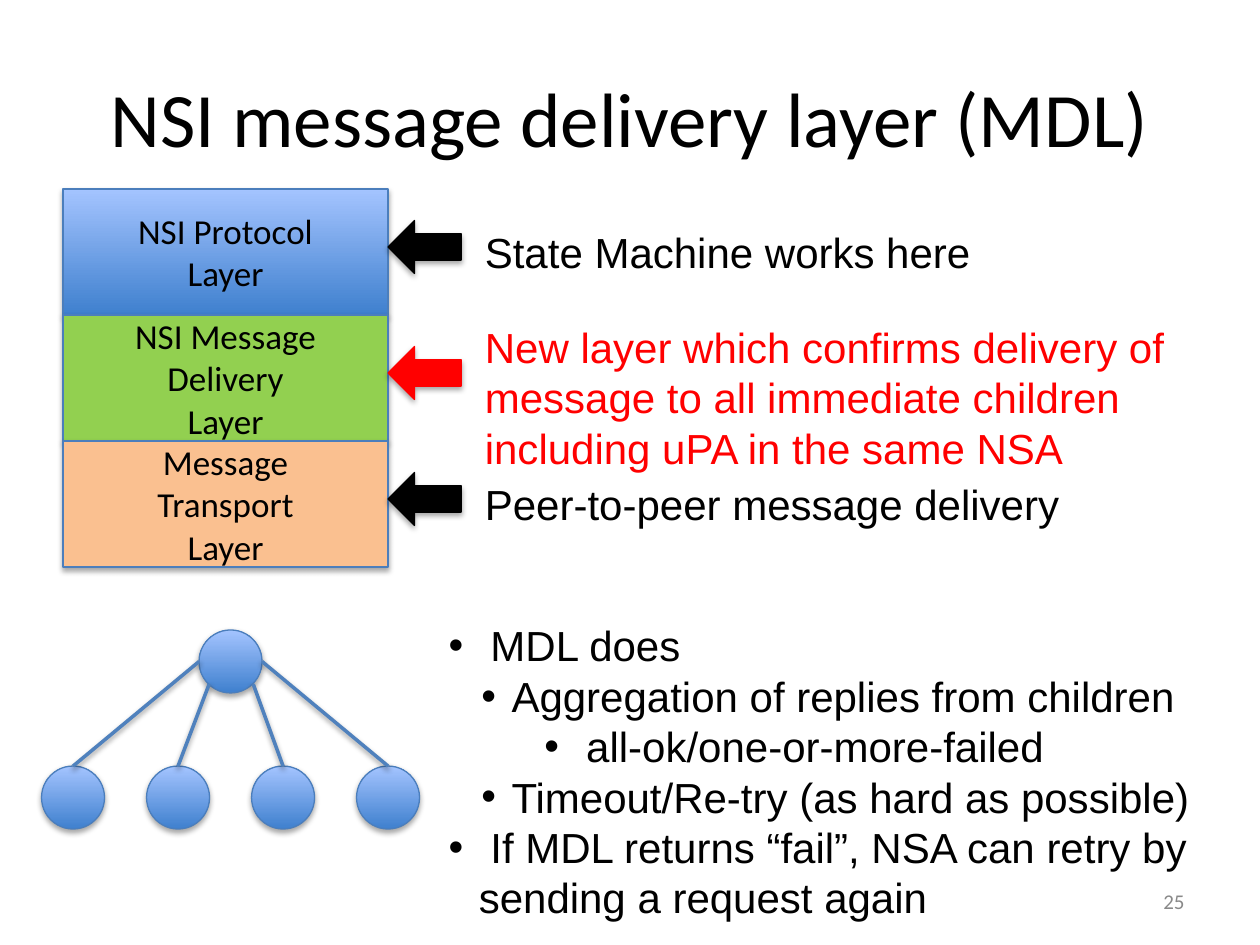
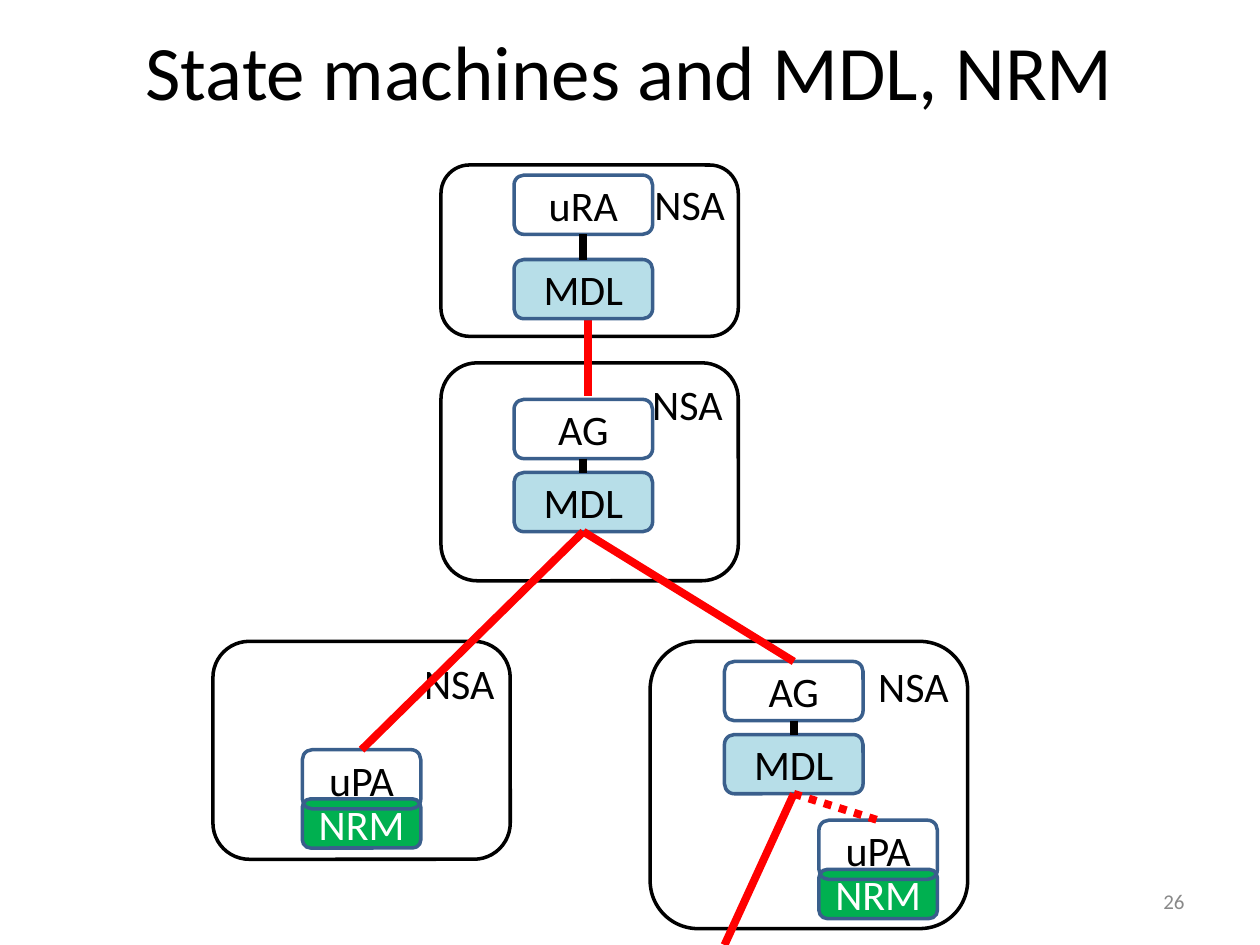
import pptx
import pptx.dml.color
import pptx.enum.dml
import pptx.enum.shapes
import pptx.enum.text
import pptx.oxml
import pptx.oxml.ns
import pptx.util
from lxml import etree

Inches = pptx.util.Inches
Pt = pptx.util.Pt
RGBColor = pptx.dml.color.RGBColor
SHAPE = pptx.enum.shapes.MSO_SHAPE
ALIGN = pptx.enum.text.PP_ALIGN
ANCHOR = pptx.enum.text.MSO_ANCHOR
DASH = pptx.enum.dml.MSO_LINE

BLACK = RGBColor(0, 0, 0)
WHITE = RGBColor(0xFF, 0xFF, 0xFF)
RED = RGBColor(0xFF, 0, 0)
GREY = RGBColor(0x89, 0x89, 0x89)
BLUE_DARK = RGBColor(0x3F, 0x80, 0xCE)
BLUE_LIGHT = RGBColor(0xA4, 0xC4, 0xFF)
BLUE_EDGE = RGBColor(0x4B, 0x7E, 0xBC)
BLUE_LINE = RGBColor(0x4F, 0x81, 0xBD)
BOX_EDGE = RGBColor(0x3A, 0x5F, 0x8C)
LIME = RGBColor(0x92, 0xD0, 0x50)
ORANGE = RGBColor(0xFA, 0xC0, 0x90)
GREEN = RGBColor(0, 0xB0, 0x50)
PALE_BLUE = RGBColor(0xB7, 0xDE, 0xE8)
GRADIENT = (BLUE_DARK, BLUE_LIGHT)

HEADING_FONT = "Calibri"
BODY_FONT = "Arial"
BODY_LINE = Pt(28.8)
HANG = 0.24


def place(sp, left, top, width, height):
    sp.left, sp.top = Inches(left), Inches(top)
    sp.width, sp.height = Inches(width), Inches(height)


def write(tf, text, size, color=BLACK, font=HEADING_FONT, align=ALIGN.CENTER,
          anchor=ANCHOR.MIDDLE, spacing=None):
    tf.text = text
    tf.vertical_anchor = anchor
    for p in tf.paragraphs:
        p.alignment = align
        if spacing:
            p.line_spacing = spacing
        for r in p.runs:
            r.font.name = font
            r.font.size = Pt(size)
            r.font.color.rgb = color


def add_title(s, text, top=0.3, height=1.25):
    place(s.shapes.title, 0.5, top, 9, height)
    write(s.shapes.title.text_frame, text, 44)


def add_number(s, number):
    sp = s.shapes.add_textbox(Inches(7.17), Inches(6.95), Inches(2.33), Inches(0.4))
    sp.text_frame.word_wrap = True
    write(sp.text_frame, str(number), 12, GREY, align=ALIGN.RIGHT)


def add_label(s, top, width, height, text, color=BLACK):
    sp = s.shapes.add_textbox(Inches(3.75), Inches(top), Inches(width), Inches(height))
    sp.text_frame.word_wrap = False
    write(sp.text_frame, text, 24, color, BODY_FONT, ALIGN.LEFT, ANCHOR.TOP, BODY_LINE)


def add_figure(s, kind, left, top, width, height, fill, edge, weight=0.75, shadow=True):
    sp = s.shapes.add_shape(kind, Inches(left), Inches(top), Inches(width), Inches(height))
    if not shadow:
        sp.shadow.inherit = False
    if fill is None:
        sp.fill.background()
    elif fill is GRADIENT:
        sp.fill.gradient()
        sp.fill.gradient_angle = 90
        for stop, position, color in zip(sp.fill.gradient_stops, (0, 1), GRADIENT):
            stop.position = position
            stop.color.rgb = color
    else:
        sp.fill.solid()
        sp.fill.fore_color.rgb = fill
    sp.line.color.rgb = edge
    sp.line.width = Pt(weight)
    return sp


def add_node(s, left, top):
    return add_figure(s, SHAPE.OVAL, left, top, 0.5, 0.5, GRADIENT, BLUE_EDGE)


def add_layer(s, top, text, fill):
    sp = add_figure(s, SHAPE.RECTANGLE, 0.5, top, 2.58, 1, fill, BLUE_EDGE)
    write(sp.text_frame, text, 20)


def add_round_box(s, left, top, width, height, text, fill=None, edge=BOX_EDGE,
                  color=BLACK, align=ALIGN.CENTER, anchor=ANCHOR.MIDDLE):
    sp = add_figure(s, SHAPE.ROUNDED_RECTANGLE, left, top, width, height, fill, edge, 2, False)
    tf = sp.text_frame
    tf.margin_left = tf.margin_right = tf.margin_top = tf.margin_bottom = Inches(0.04)
    write(tf, text, 24, color, align=align, anchor=anchor)
    return sp


def add_frame(s, left, top, width, height):
    add_round_box(s, left, top, width, height, "NSA", edge=BLACK,
                  align=ALIGN.RIGHT, anchor=ANCHOR.TOP)


def add_line(s, start, end, color, weight, shadow=False):
    x1, y1 = start
    x2, y2 = end
    line = s.shapes.add_connector(pptx.enum.shapes.MSO_CONNECTOR.STRAIGHT,
                                  Inches(x1), Inches(y1), Inches(x2), Inches(y2))
    line.line.color.rgb = color
    line.line.width = Pt(weight)
    if not shadow:
        etree.SubElement(line._element.spPr, pptx.oxml.ns.qn("a:effectLst"))
    return line


def link(s, upper, lower, color):
    line = add_line(s, (0, 0), (1, 1), color, 4.5)
    line.begin_connect(upper, 2)
    line.end_connect(lower, 0)
    return line


def add_bullets(sp, items):
    tf = sp.text_frame
    write(tf, "\n".join(text for _, text in items), 24, BLACK, BODY_FONT,
          ALIGN.LEFT, ANCHOR.TOP, BODY_LINE)
    tf.auto_size = pptx.enum.text.MSO_AUTO_SIZE.SHAPE_TO_FIT_TEXT
    for p, (level, _) in zip(tf.paragraphs, items):
        p.level = level
        p.space_before = Pt(0)
        pPr = p._p.get_or_add_pPr()
        pPr.set("marL", str(Inches((HANG, 0.5, 1)[level])))
        pPr.set("indent", str(-Inches(HANG)))
        etree.SubElement(pPr, pptx.oxml.ns.qn("a:buFont"), typeface=BODY_FONT)
        etree.SubElement(pPr, pptx.oxml.ns.qn("a:buChar"), char="•")


def add_tree(s):
    add_node(s, 1.58, 5)
    starts = [(1.58, 5.25), (1.66, 5.43), (2.01, 5.43), (2.08, 5.25)]
    for i, start in enumerate(starts):
        child = add_node(s, 0.33 + i * 2.5 / 3, 6.08)
        line = add_line(s, start, (1, 6.08), BLUE_LINE, 2, True)
        line.end_connect(child, 0)


def build_delivery_layer(prs):
    s = prs.slides.add_slide(prs.slide_layouts[1])
    add_title(s, "NSI message delivery layer (MDL)")
    add_tree(s)
    layers = [("NSI Protocol\nLayer", GRADIENT, BLACK),
              ("NSI Message\nDelivery\nLayer", LIME, RED),
              ("Message\nTransport\nLayer", ORANGE, BLACK)]
    for i, (text, fill, _) in enumerate(layers):
        add_layer(s, 1.5 + i, text, fill)
    for i, (_, _, color) in enumerate(layers):
        add_figure(s, SHAPE.LEFT_ARROW, 3.08, 1.75 + i, 0.58, 0.42, color, color)
    add_label(s, 1.75, 4.1, 0.5, "State Machine works here")
    add_label(s, 3.75, 4.81, 0.5, "Peer-to-peer message delivery")
    add_label(s, 2.5, 5.66, 1.31, "New layer which confirms delivery of\n"
              "message to all immediate children\nincluding uPA in the same NSA", RED)
    body = s.placeholders[1]
    place(body, 3.46, 4.87, 6.54, 2.52)
    add_bullets(body, [(0, " MDL does"),
                       (1, "Aggregation of replies from children"),
                       (2, " all-ok/one-or-more-failed"),
                       (1, "Timeout/Re-try (as hard as possible)"),
                       (0, " If MDL returns “fail”, NSA can retry by sending a request again")])
    add_number(s, 25)


def build_state_machines(prs):
    s = prs.slides.add_slide(prs.slide_layouts[5])
    add_title(s, "State machines and MDL, NRM", 0, 1.1)
    for frame in [(3.5, 1.31, 2.36, 1.36), (3.5, 2.88, 2.36, 1.73),
                  (1.69, 5.09, 2.36, 1.73), (5.16, 5.09, 2.52, 2.28)]:
        add_frame(s, *frame)

    providers = []
    for left, top in [(2.4, 5.95), (6.5, 6.51)]:
        add_round_box(s, left, top + 0.39, 0.94, 0.39, "NRM", GREEN, color=WHITE)
        providers.append(add_round_box(s, left, top, 0.94, 0.47, "uPA"))

    add_line(s, (4.67, 2.33), (4.67, 3.14), RED, 4.5)
    agents, mdls = [], []
    for left, top, name, mdl_top in [(4.08, 1.39, "uRA", 2.06), (4.08, 3.17, "AG", 3.75),
                                     (5.75, 5.25, "AG", 5.83)]:
        agents.append(add_round_box(s, left, top, 1.1, 0.47, name))
        mdls.append(add_round_box(s, left, mdl_top, 1.1, 0.47, "MDL", PALE_BLUE))
        link(s, agents[-1], mdls[-1], BLACK)

    link(s, mdls[1], providers[0], RED)
    link(s, mdls[1], agents[2], RED)
    link(s, mdls[2], providers[1], RED).line.dash_style = DASH.ROUND_DOT
    add_line(s, (6.3, 6.3), (5.75, 7.5), RED, 4.5).begin_connect(mdls[2], 2)
    add_number(s, 26)


def main():
    prs = pptx.Presentation()
    prs.slide_width, prs.slide_height = Inches(10), Inches(7.5)
    build_delivery_layer(prs)
    build_state_machines(prs)
    prs.save("out.pptx")


if __name__ == "__main__":
    main()
